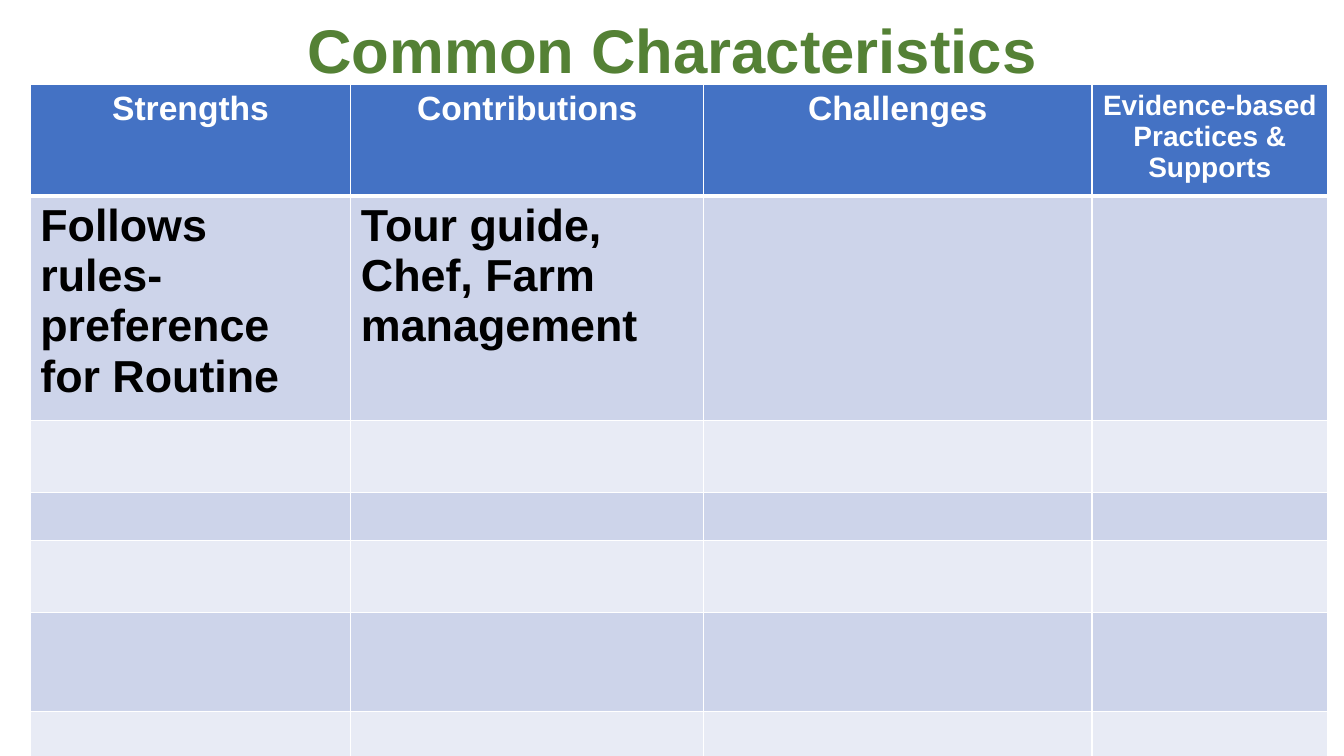
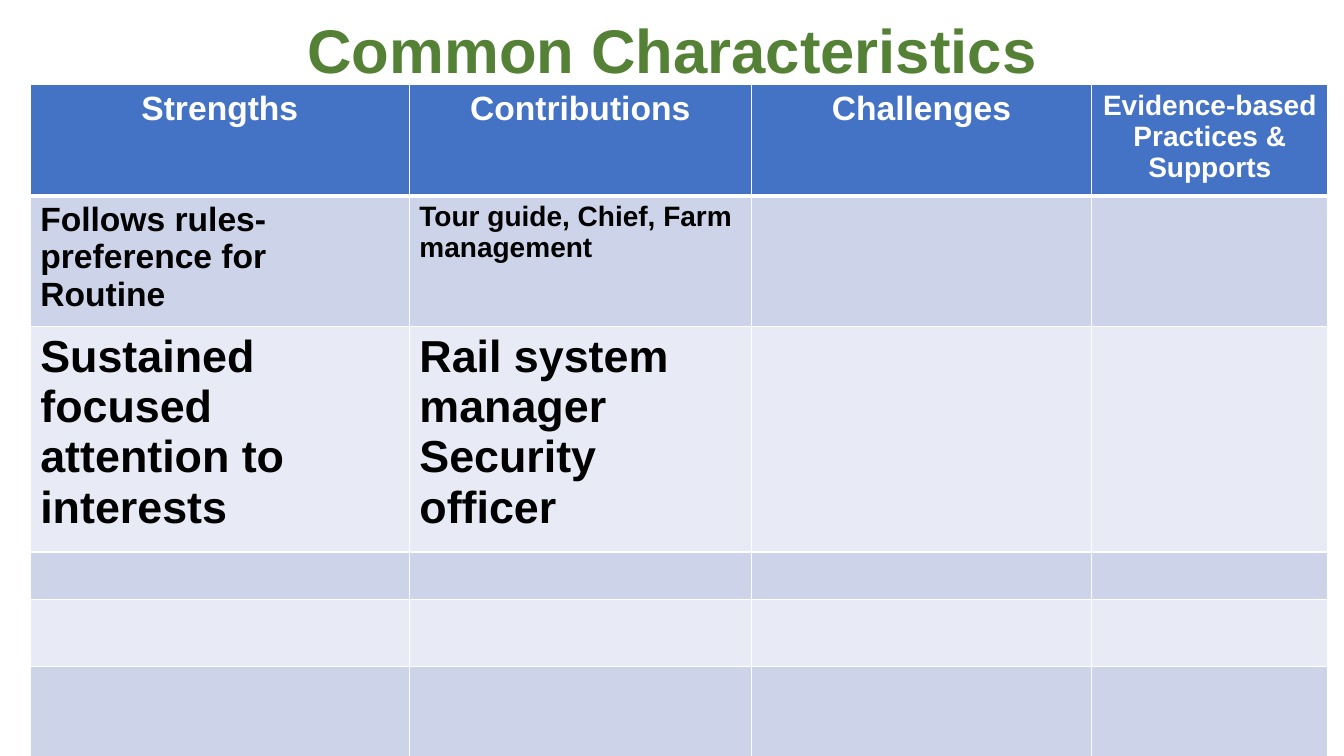
from lxml.etree import SubElement
from pptx import Presentation
from pptx.dml.color import RGBColor
from pptx.enum.text import MSO_ANCHOR, PP_ALIGN
from pptx.oxml.ns import qn
from pptx.util import Inches, Pt

COLORS = {
    "title": "548135",
    "header": "4472C4",
    "odd_row": "CDD4EA",
    "even_row": "E8EBF5",
    "border": "FFFFFF",
    "header_text": "FFFFFF",
    "body_text": "000000",
}
FONT = "Arial"
TITLE = "Common Characteristics"
TABLE_LEFT, TABLE_TOP = 0.3, 0.84

# Each filled cell is (text size, paragraphs); the remaining cells stay empty.
HEADER = [
    (24, ["Strengths"]),
    (24, ["Contributions"]),
    (24, ["Challenges"]),
    (20, ["Evidence-based Practices & Supports"]),
]
SLIDES = [
    {
        "columns": [3.18, 3.5, 3.85, 2.34],
        "rows": [1.05, 1.62, 0.71, 0.48, 0.71, 0.98, 0.71],
        "body": [
            [(32, ["Follows rules- preference for Routine"]),
             (32, ["Tour guide, Chef, Farm management"])],
        ],
    },
    {
        "columns": [3.76, 3.39, 3.38, 2.34],
        "rows": [1.03, 0.84, 1.59, 0.47, 0.67, 0.93, 0.67],
        "body": [
            [(24, ["Follows rules- preference for Routine"]),
             (20, ["Tour guide, Chief, Farm management"])],
            [(32, ["Sustained focused attention to interests"]),
             (32, ["Rail system manager", "Security officer"])],
        ],
    },
]


def rgb(name):
    return RGBColor.from_string(COLORS[name])


def write_text(frame, paragraphs, size, color, align):
    for index, text in enumerate(paragraphs):
        paragraph = frame.add_paragraph() if index else frame.paragraphs[0]
        paragraph.alignment = align
        run = paragraph.add_run()
        run.text = text
        run.font.name = FONT
        run.font.size = Pt(size)
        run.font.bold = True
        run.font.color.rgb = rgb(color)


def add_title(slide):
    box = slide.shapes.add_textbox(Inches(0.92), 0, Inches(11.5), Inches(1.07))
    frame = box.text_frame
    frame.word_wrap = True
    frame.vertical_anchor = MSO_ANCHOR.MIDDLE
    write_text(frame, [TITLE], 44, "title", PP_ALIGN.CENTER)
    frame.paragraphs[0].line_spacing = 0.9


def set_borders(cell, top, bottom):
    """Draw the cell's four borders; top and bottom are widths in points."""
    properties = cell._tc.get_or_add_tcPr()
    for side, width in (("L", 1), ("R", 1), ("T", top), ("B", bottom)):
        line = SubElement(properties, qn(f"a:ln{side}"), w=str(Pt(width)))
        fill = SubElement(line, qn("a:solidFill"))
        SubElement(fill, qn("a:srgbClr"), val=COLORS["border"])


def add_table(slide, content):
    columns, rows = content["columns"], content["rows"]
    table = slide.shapes.add_table(
        len(rows), len(columns), Inches(TABLE_LEFT), Inches(TABLE_TOP),
        Inches(sum(columns)), Inches(sum(rows))).table
    for column, width in zip(table.columns, columns):
        column.width = Inches(width)
    for row, height in zip(table.rows, rows):
        row.height = Inches(height)

    texts = [HEADER] + content["body"]
    for row_index, row in enumerate(table.rows):
        is_header = row_index == 0
        band = "header" if is_header else "odd_row" if row_index % 2 else "even_row"
        color = "header_text" if is_header else "body_text"
        align = PP_ALIGN.CENTER if is_header else PP_ALIGN.LEFT
        row_texts = texts[row_index] if row_index < len(texts) else []
        for cell in row.cells:
            set_borders(cell, top=3 if row_index == 1 else 1, bottom=3 if is_header else 1)
            cell.fill.solid()
            cell.fill.fore_color.rgb = rgb(band)
        for cell, (size, paragraphs) in zip(row.cells, row_texts):
            write_text(cell.text_frame, paragraphs, size, color, align)


def main():
    presentation = Presentation()
    presentation.slide_width = Inches(13.33)
    presentation.slide_height = Inches(7.5)
    for content in SLIDES:
        slide = presentation.slides.add_slide(presentation.slide_layouts[6])
        add_title(slide)
        add_table(slide, content)
    presentation.save("out.pptx")


if __name__ == "__main__":
    main()
